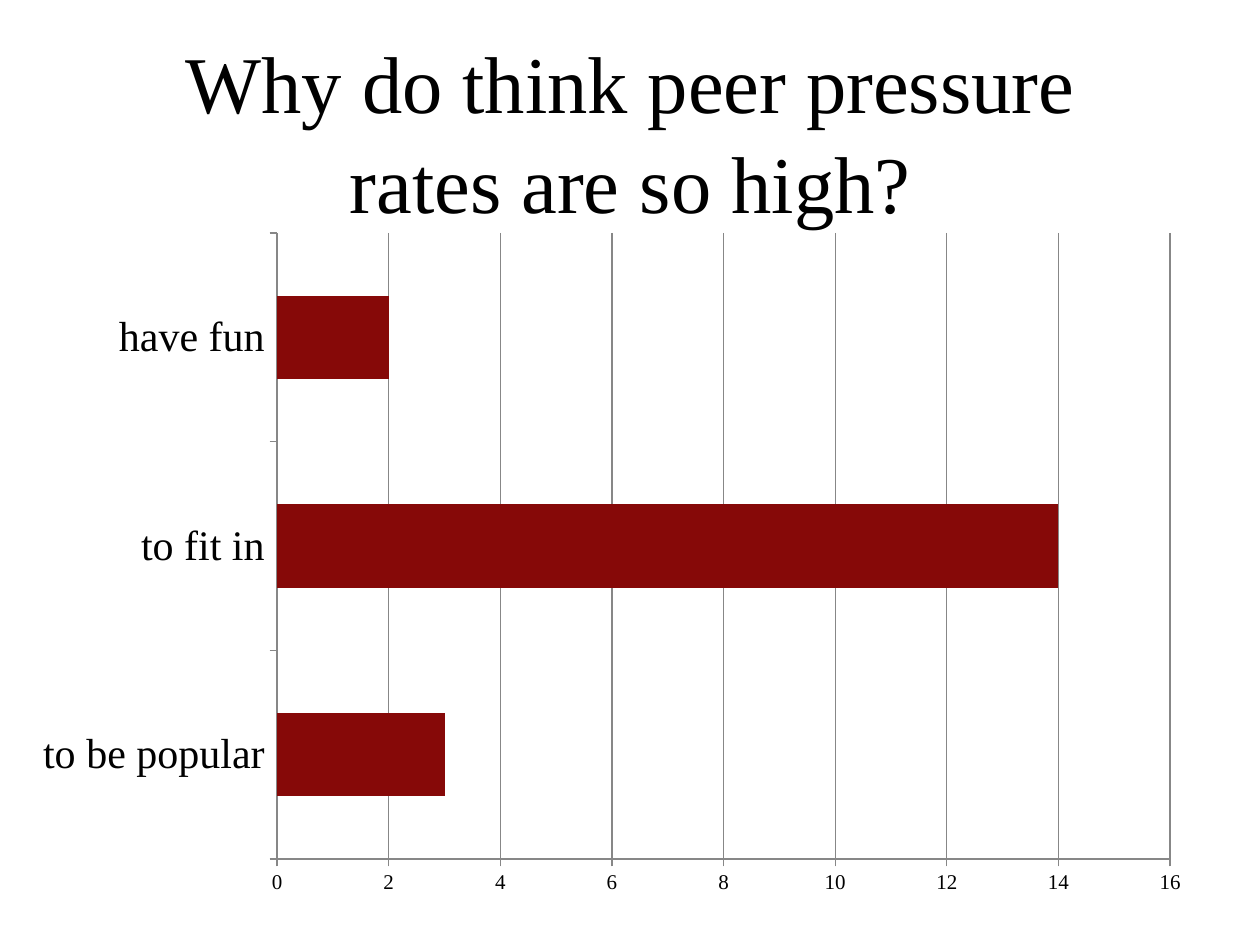
from lxml.etree import SubElement
from pptx import Presentation
from pptx.chart.data import CategoryChartData
from pptx.dml.color import RGBColor
from pptx.enum.chart import XL_CHART_TYPE, XL_TICK_MARK
from pptx.enum.text import MSO_ANCHOR, PP_ALIGN
from pptx.oxml.ns import qn
from pptx.util import Pt

BLACK = RGBColor(0x00, 0x00, 0x00)
DARK_RED = RGBColor(0x86, 0x09, 0x08)
GRAY = RGBColor(0x87, 0x87, 0x87)
FONT = "Times New Roman"


def set_font(font, size, color=BLACK):
    font.name = FONT
    font.size = Pt(size)
    font.color.rgb = color


def add_text(s, text, x, y, w, h, size, align=PP_ALIGN.CENTER, spacing=1.0):
    tf = s.shapes.add_textbox(Pt(x), Pt(y), Pt(w), Pt(h)).text_frame
    tf.word_wrap = True
    tf.vertical_anchor = MSO_ANCHOR.MIDDLE
    p = tf.paragraphs[0]
    p.alignment = align
    p.line_spacing = spacing
    r = p.add_run()
    r.text = text
    set_font(r.font, size)


def style_axis(axis, size):
    axis.major_tick_mark = XL_TICK_MARK.OUTSIDE
    axis.minor_tick_mark = XL_TICK_MARK.NONE
    axis.format.line.color.rgb = GRAY
    set_font(axis.tick_labels.font, size)


def place_plot(chart, **fractions):
    """Fix the inner plot area as fractions of the chart frame."""
    area = chart.plots[0]._element.getparent()
    for old in area.findall(qn("c:layout")):
        area.remove(old)
    layout = area.makeelement(qn("c:layout"))
    area.insert(0, layout)
    manual = SubElement(layout, qn("c:manualLayout"))
    settings = {"layoutTarget": "inner", "xMode": "edge", "yMode": "edge", **fractions}
    for name, value in settings.items():
        SubElement(manual, qn(f"c:{name}")).set("val", str(value))


def add_reasons_chart(s, x, y, w, h):
    data = CategoryChartData()
    data.categories = ["to be popular", "to fit in", "have fun"]
    data.add_series("Series 1", (3, 14, 2))
    chart = s.shapes.add_chart(
        XL_CHART_TYPE.BAR_CLUSTERED, Pt(x), Pt(y), Pt(w), Pt(h), data
    ).chart
    chart.has_title = False
    chart.has_legend = False
    set_font(chart.font, 10)

    plot = chart.plots[0]
    plot.vary_by_categories = False
    plot.gap_width = 150
    fill = plot.series[0].format.fill
    fill.solid()
    fill.fore_color.rgb = DARK_RED

    style_axis(chart.category_axis, 24)
    values = chart.value_axis
    style_axis(values, 12)
    values.minimum_scale, values.maximum_scale, values.major_unit = 0, 16, 2
    values.has_major_gridlines = True
    values.major_gridlines.format.line.color.rgb = GRAY
    place_plot(chart, x=0.218, y=0.02, w=0.754, h=0.91)


def main():
    prs = Presentation()
    prs.slide_width, prs.slide_height = Pt(720), Pt(540)
    s = prs.slides.add_slide(prs.slide_layouts[6])
    add_text(s, "Why do think peer pressure rates are so high?",
             72, 39.6, 576, 68.4, size=46, spacing=1.04)
    add_reasons_chart(s, 10.8, 125.28, 676.8, 393.12)
    prs.save("out.pptx")


if __name__ == "__main__":
    main()
